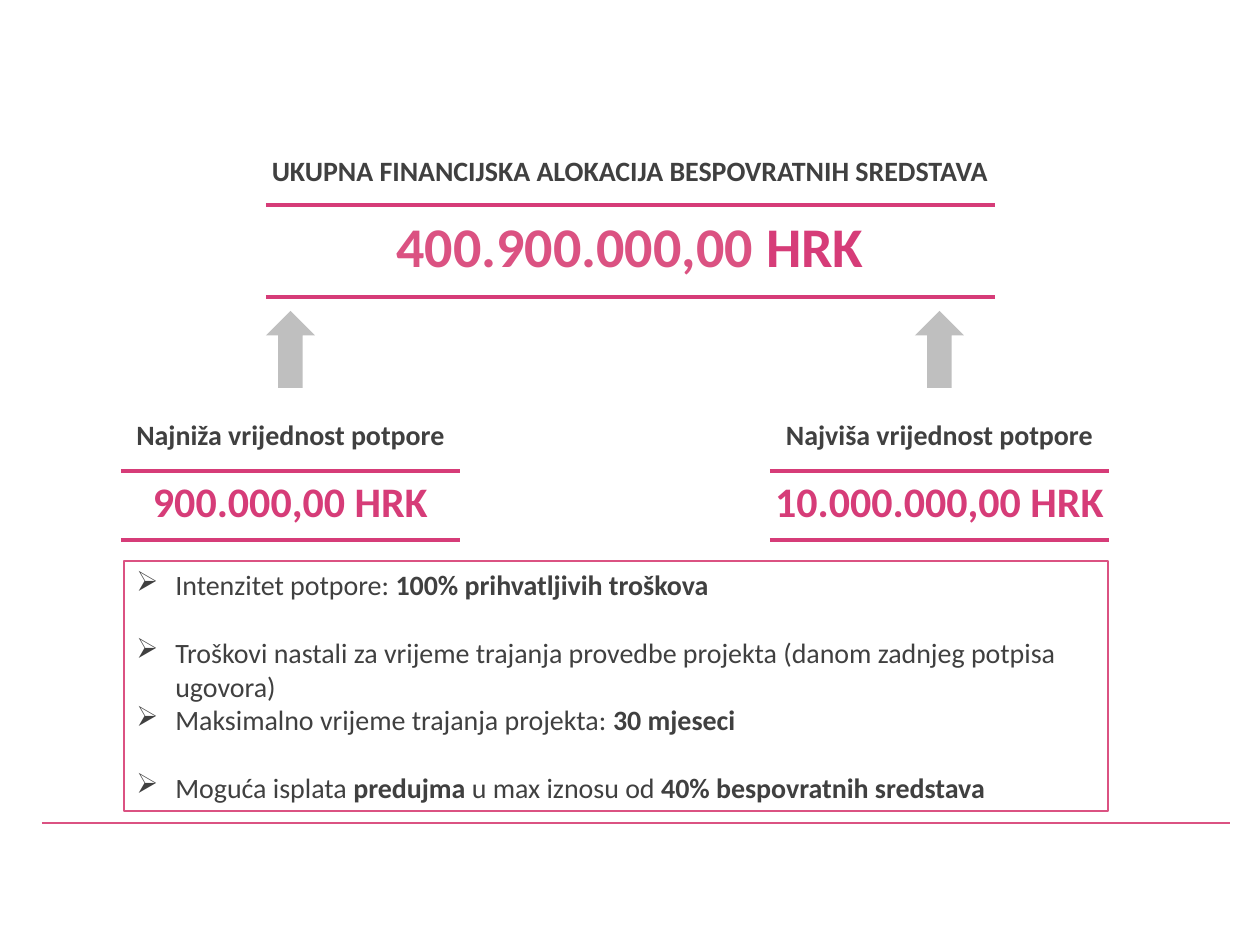
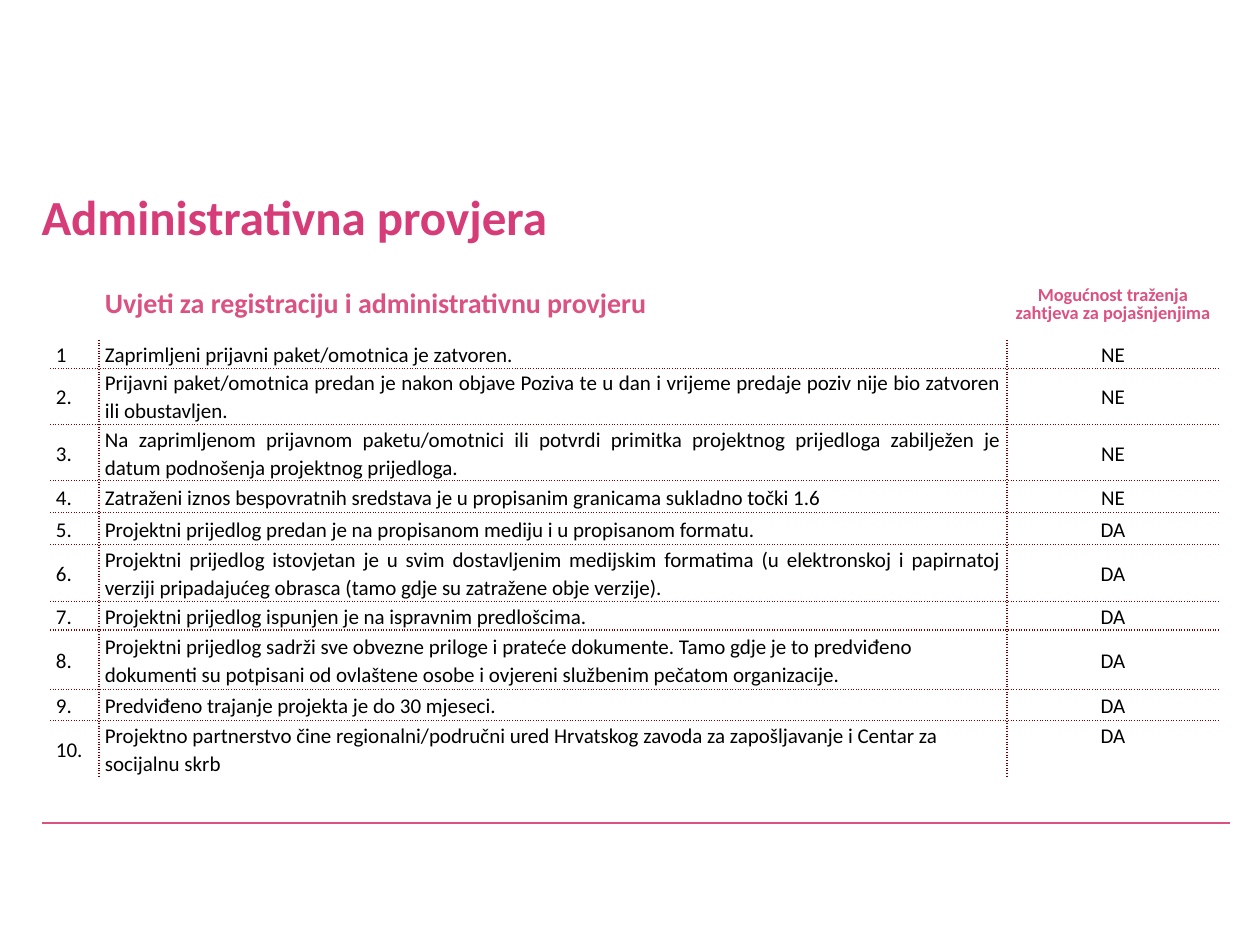
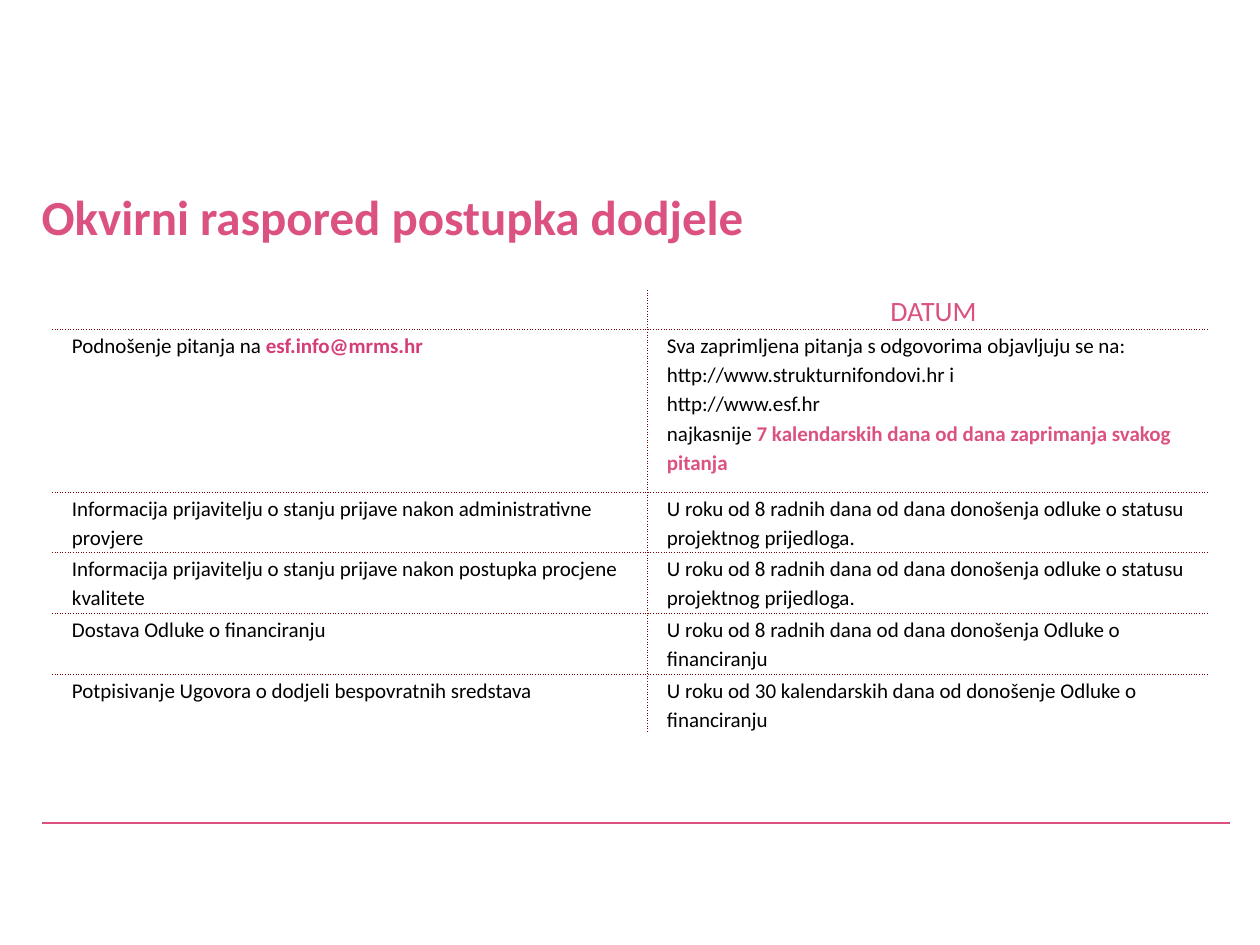
import pptx
import pptx.dml.color
import pptx.enum.shapes
import pptx.enum.text
import pptx.oxml
import pptx.oxml.ns
import pptx.util

FONT = "Calibri"
PINK, ROSE, GRAY = "D63C78", "DB5282", "404040"
BLACK, SILVER, MAROON = "000000", "BFBFBF", "800000"
LEFT = pptx.enum.text.PP_ALIGN.LEFT
MID = pptx.enum.text.PP_ALIGN.CENTER
EVEN = pptx.enum.text.PP_ALIGN.JUSTIFY
TOP = pptx.enum.text.MSO_ANCHOR.TOP
CENTER = pptx.enum.text.MSO_ANCHOR.MIDDLE


def px(count):
    return pptx.util.Emu(round(count * 914400 / 126))


def color(code):
    return pptx.dml.color.RGBColor.from_string(code)


def node(tag, inner="", **attrs):
    text = "".join(f' {key}="{value}"' for key, value in attrs.items())
    names = pptx.oxml.ns.nsdecls("a")
    return pptx.oxml.parse_xml(f"<a:{tag} {names}{text}>{inner}</a:{tag}>")


class Deck:
    def __init__(self):
        self.show = pptx.Presentation()
        self.show.slide_width, self.show.slide_height = px(1260), px(945)
        self.slide = None

    def page(self):
        """Start a slide with the shared footer rule."""
        self.slide = self.show.slides.add_slide(self.show.slide_layouts[5])
        self.line(42, 823, 1188, ROSE, 1)

    def words(self, para, parts, size, tint, bold=False, align=LEFT, lead=None):
        """Fill a paragraph; parts is a string or (text, tint, bold) tuples."""
        if isinstance(parts, str):
            parts = [(parts, tint, bold)]
        para.alignment = align
        if lead:
            para.line_spacing = lead
        for text, shade, heavy in parts:
            run = para.add_run()
            run.text = text
            run.font.name = FONT
            run.font.size = pptx.util.Pt(size)
            run.font.bold = heavy
            run.font.color.rgb = color(shade)

    def fit(self, frame, wrap, anchor=TOP):
        frame.word_wrap = wrap
        frame.auto_size = pptx.enum.text.MSO_AUTO_SIZE.NONE
        frame.vertical_anchor = anchor

    def title(self, text, box, size, tint, align=LEFT):
        shape = self.slide.shapes.title
        shape.left, shape.top, shape.width, shape.height = map(px, box)
        self.fit(shape.text_frame, False)
        self.words(shape.text_frame.paragraphs[0], text, size, tint, True, align)

    def label(self, parts, box, size, tint):
        frame = self.slide.shapes.add_textbox(*map(px, box)).text_frame
        self.fit(frame, False)
        self.words(frame.paragraphs[0], parts, size, tint, True, MID)

    def line(self, left, top, width, tint=PINK, weight=2):
        kind = pptx.enum.shapes.MSO_CONNECTOR.STRAIGHT
        ends = map(px, (left, top, left + width, top))
        rule = self.slide.shapes.add_connector(kind, *ends)
        rule.line.color.rgb = color(tint)
        rule.line.width = pptx.util.Pt(weight)
        rule._element.spPr.append(node("effectLst"))

    def arrow(self, box):
        kind = pptx.enum.shapes.MSO_SHAPE.UP_ARROW
        shape = self.slide.shapes.add_shape(kind, *map(px, box))
        shape.shadow.inherit = False
        shape.fill.solid()
        shape.fill.fore_color.rgb = color(SILVER)
        shape.line.fill.background()

    def bullets(self, items, box, size, tint):
        """Framed list; each item is (gap before in points, parts)."""
        kind = pptx.enum.shapes.MSO_SHAPE.RECTANGLE
        shape = self.slide.shapes.add_shape(kind, *map(px, box))
        shape.shadow.inherit = False
        shape.fill.background()
        shape.line.color.rgb = color(ROSE)
        shape.line.width = pptx.util.Pt(0.75)
        frame = shape.text_frame
        self.fit(frame, True, CENTER)
        for place, (gap, parts) in enumerate(items):
            para = frame.add_paragraph() if place else frame.paragraphs[0]
            props = para._p.get_or_add_pPr()
            props.set("marL", str(px(39)))
            props.set("indent", str(-px(39)))
            props.append(node("buChar", char="➢"))
            if gap:
                para.space_before = pptx.util.Pt(gap)
            self.words(para, parts, size, tint)

    def edges(self, cell, sides, weight):
        """Dot the named sides of a cell and clear the others."""
        props = cell._tc.get_or_add_tcPr()
        dots = (f'<a:solidFill><a:srgbClr val="{MAROON}"/></a:solidFill>'
                '<a:prstDash val="sysDot"/>')
        for place, side in enumerate("LRTB"):
            inner = dots if side in sides else "<a:noFill/>"
            width = pptx.util.Pt(weight)
            props.insert(place, node("ln" + side, inner, w=width))

    def table(self, spot, cols, rows, weight, pads, anchor, bare=0):
        """Empty grid with dotted inner edges; the first bare rows have none."""
        size = sum(cols), sum(rows)
        grid = self.slide.shapes.add_table(
            len(rows), len(cols), *map(px, spot + size)).table
        grid.first_row = grid.horz_banding = False
        for col, width in zip(grid.columns, cols):
            col.width = px(width)
        for y, height in enumerate(rows):
            grid.rows[y].height = px(height)
            for x in range(len(cols)):
                cell = grid.cell(y, x)
                cell.fill.background()
                cell.margin_left, cell.margin_right = map(px, pads)
                cell.margin_top = cell.margin_bottom = 0
                cell.vertical_anchor = anchor
                tests = {"L": x > 0, "R": x < len(cols) - 1,
                         "T": y > bare, "B": y < len(rows) - 1}
                sides = [side for side, inner in tests.items() if inner]
                self.edges(cell, sides if y >= bare else [], weight)
        return grid

    def cell(self, grid, y, x, paras, size, tint, bold=False, align=LEFT, lead=1.1):
        frame = grid.cell(y, x).text_frame
        for place, parts in enumerate(paras):
            para = frame.add_paragraph() if place else frame.paragraphs[0]
            self.words(para, parts, size, tint, bold, align, lead)


def funds(deck):
    deck.page()
    # Total amount
    deck.title("UKUPNA FINANCIJSKA ALOKACIJA BESPOVRATNIH SREDSTAVA",
               (230, 147, 800, 47), 16, GRAY, MID)
    for top in (205, 297):
        deck.line(266, top, 729)
    deck.label([("400.900.000,00 ", ROSE, True), ("HRK", PINK, True)],
               (382, 205, 496, 81), 32, PINK)
    # Lowest and highest grant
    sums = [("Najniža vrijednost potpore", "900.000,00 HRK"),
            ("Najviša vrijednost potpore", "10.000.000,00 HRK")]
    for place, (name, value) in enumerate(sums):
        left = 121 + 649 * place
        deck.arrow((left + 145, 311, 49, 77))
        deck.label(name, (left, 411, 339, 47), 16, GRAY)
        deck.label(value, (left, 469, 339, 63), 24, PINK)
        for top in (471, 540):
            deck.line(left, top, 339)
    # Terms
    deck.bullets([
        (0, [("Intenzitet potpore: ", GRAY, False),
             ("100% prihvatljivih troškova", GRAY, True)]),
        (19.5, "Troškovi nastali za vrijeme trajanja provedbe projekta "
               "(danom zadnjeg potpisa ugovora)"),
        (0, [("Maksimalno vrijeme trajanja projekta: ", GRAY, False),
             ("30 mjeseci", GRAY, True)]),
        (19.5, [("Moguća isplata ", GRAY, False), ("predujma", GRAY, True),
                (" u max iznosu od ", GRAY, False),
                ("40% bespovratnih sredstava", GRAY, True)]),
    ], (124, 561, 984, 250), 16, GRAY)


def checks(deck):
    deck.page()
    deck.title("Administrativna provjera", (29, 180, 533, 72), 28, PINK)
    rows = [
        ("1", "Zaprimljeni prijavni paket/omotnica je zatvoren.", "NE"),
        ("2.", "Prijavni paket/omotnica predan je nakon objave Poziva te u dan i "
               "vrijeme predaje poziv nije bio zatvoren ili obustavljen.", "NE"),
        ("3.", "Na zaprimljenom prijavnom paketu/omotnici ili potvrdi primitka "
               "projektnog prijedloga zabilježen je datum podnošenja projektnog "
               "prijedloga.", "NE"),
        ("4.", "Zatraženi iznos bespovratnih sredstava je u propisanim granicama "
               "sukladno točki 1.6", "NE"),
        ("5.", "Projektni prijedlog predan je na propisanom mediju i u propisanom "
               "formatu.", "DA"),
        ("6.", "Projektni prijedlog istovjetan je u svim dostavljenim medijskim "
               "formatima (u elektronskoj i papirnatoj verziji pripadajućeg obrasca "
               "(tamo gdje su zatražene obje verzije).", "DA"),
        ("7.", "Projektni prijedlog ispunjen je na ispravnim predlošcima.", "DA"),
        ("8.", "Projektni prijedlog sadrži sve obvezne priloge i prateće dokumente. "
               "Tamo gdje je to predviđeno dokumenti su potpisani od ovlaštene osobe "
               "i ovjereni službenim pečatom organizacije.", "DA"),
        ("9.", "Predviđeno trajanje projekta je do 30 mjeseci.", "DA"),
        ("10.", "Projektno partnerstvo čine regionalni/područni ured Hrvatskog zavoda "
                "za zapošljavanje i Centar za socijalnu skrb", "DA"),
    ]
    high = [70, 28, 55, 55, 32, 32, 57, 28, 60, 31, 57]
    grid = deck.table((50, 270), (49, 908, 212), high, 0.75, (6, 6), CENTER, bare=1)
    deck.cell(grid, 0, 1, ["Uvjeti za registraciju i administrativnu provjeru"],
              16, ROSE, True, lead=0.8)
    deck.cell(grid, 0, 2, ["Mogućnost traženja zahtjeva za pojašnjenjima"],
              10.5, ROSE, True, MID, 0.8)
    for y, row in enumerate(rows, 1):
        aligns = LEFT, EVEN if y < 7 else LEFT, MID
        for x, text in enumerate(row):
            deck.cell(grid, y, x, [text], 12, BLACK, align=aligns[x])
    grid.cell(len(rows), 2).vertical_anchor = TOP


def dates(deck):
    deck.page()
    deck.title("Okvirni raspored postupka dodjele", (29, 180, 735, 72), 28, ROSE)
    status = ("U roku od 8 radnih dana od dana donošenja odluke o statusu "
              "projektnog prijedloga.")
    notice = "Informacija prijavitelju o stanju prijave nakon "
    rows = [
        ([[("Podnošenje pitanja na ", BLACK, False),
           ("esf.info@mrms.hr", PINK, True)]],
         ["Sva zaprimljena pitanja s odgovorima objavljuju se na: "
          "http://www.strukturnifondovi.hr i",
          "http://www.esf.hr",
          [("najkasnije ", BLACK, False),
           ("7 kalendarskih dana od dana zaprimanja svakog pitanja", ROSE, True)]]),
        ([notice + "administrativne provjere"], [status]),
        ([notice + "postupka procjene kvalitete"], [status]),
        (["Dostava Odluke o financiranju"],
         ["U roku od 8 radnih dana od dana donošenja Odluke o financiranju"]),
        (["Potpisivanje Ugovora o dodjeli bespovratnih sredstava"],
         ["U roku od 30 kalendarskih dana od donošenje Odluke o financiranju"]),
    ]
    high = [39, 163, 60, 61, 61, 58]
    grid = deck.table((52, 290), (595, 561), high, 0.5, (20, 8), TOP)
    deck.cell(grid, 0, 1, ["DATUM"], 16, ROSE, align=MID, lead=1.15)
    for y, row in enumerate(rows, 1):
        for x, paras in enumerate(row):
            deck.cell(grid, y, x, paras, 12, BLACK, lead=1.15)


def main():
    deck = Deck()
    for build in (funds, checks, dates):
        build(deck)
    deck.show.save("out.pptx")


if __name__ == "__main__":
    main()
